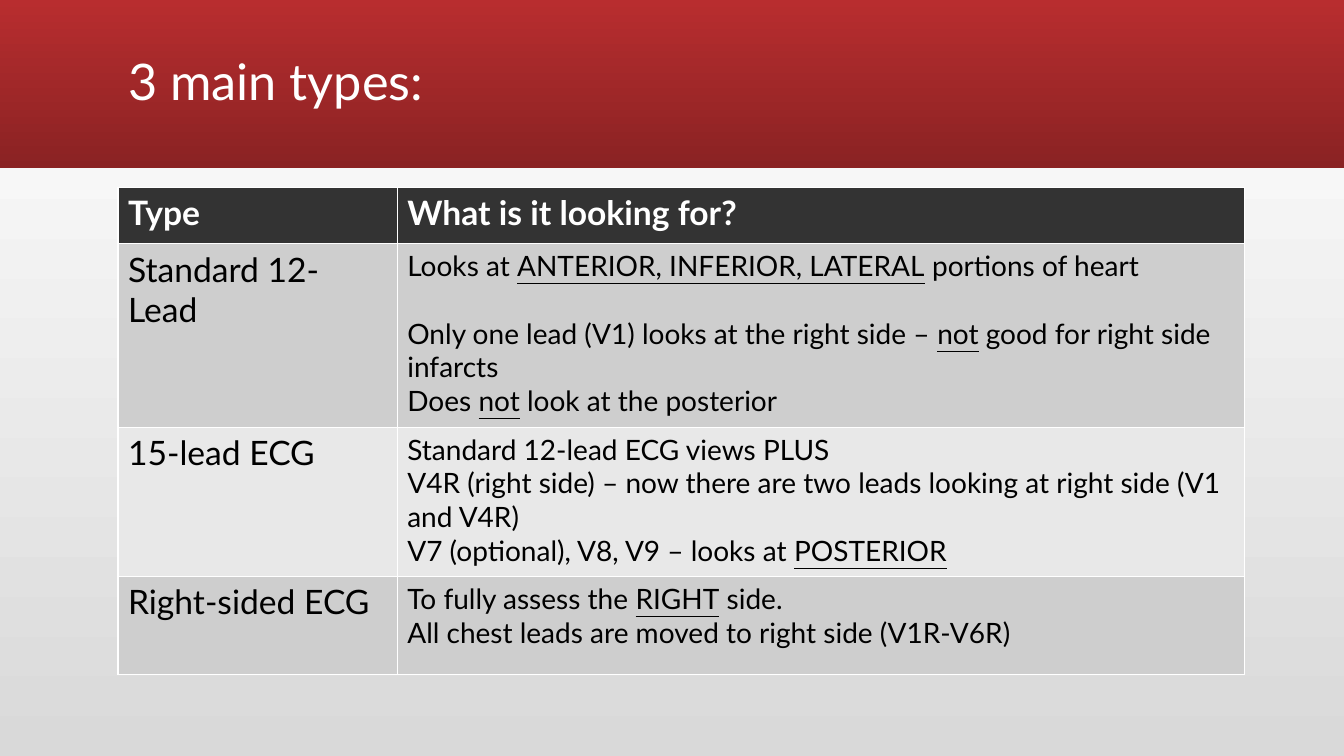
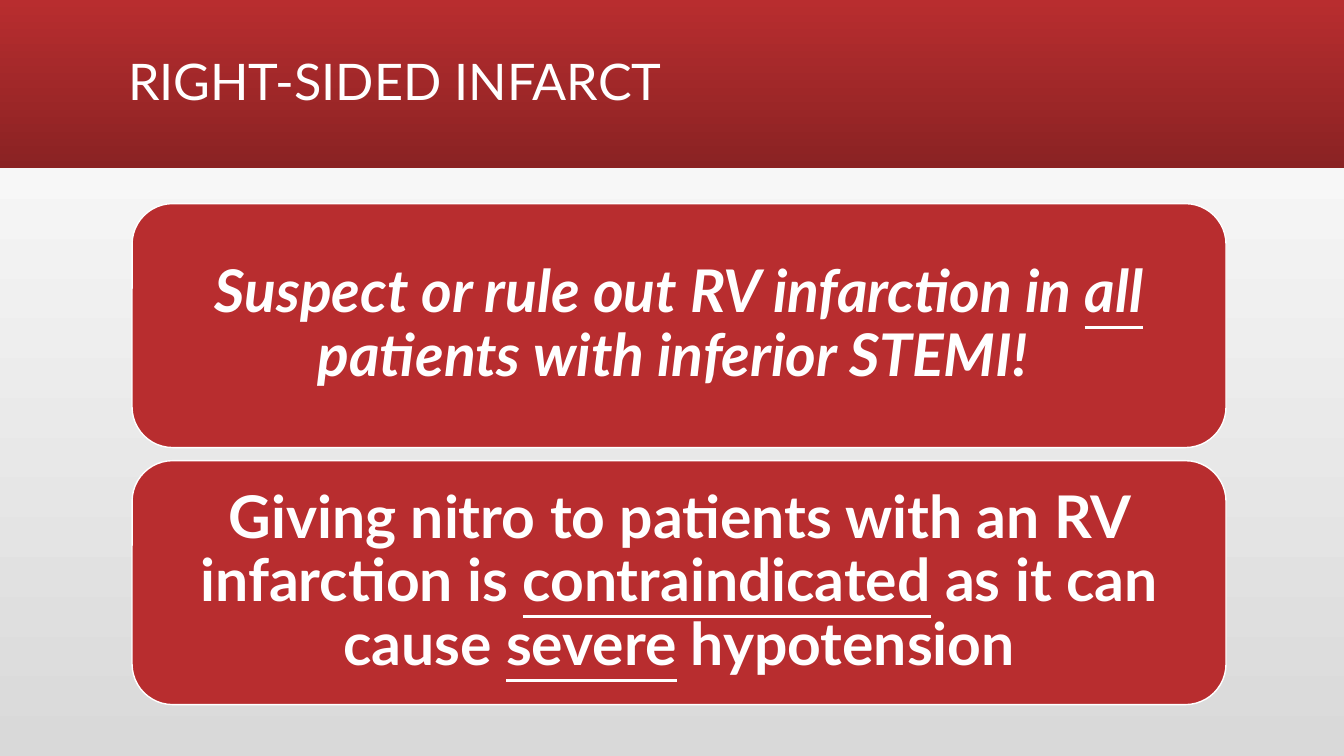
from pptx import Presentation
from pptx.dml.color import RGBColor
from pptx.enum.shapes import MSO_SHAPE
from pptx.enum.text import MSO_ANCHOR, PP_ALIGN
from pptx.util import Inches, Pt

RECTANGLE, ROUNDED = MSO_SHAPE.RECTANGLE, MSO_SHAPE.ROUNDED_RECTANGLE
LEFT, CENTER = PP_ALIGN.LEFT, PP_ALIGN.CENTER
MIDDLE = MSO_ANCHOR.MIDDLE

FONT = "Lato"
RED, DARK_RED = "B82D2F", "8A2223"
WHITE, BLACK, PALE_GREY = "FFFFFF", "000000", "D9D9D9"
HEADER_GREY, ROW_GREYS = "333333", ("CECECE", "E8E8E8")
DOWNWARD, UPWARD = 270, 90

WIDTH, HEIGHT = 13.33, 7.5
BAND_HEIGHT = 1.67
MARGIN = 1.17

# Words between underscores are underlined.
TYPES_TITLE = "3 main types:"
TYPES_HEADER = ("Type", "What is it looking for?")
TYPES = [
    ("Standard 12-Lead", [
        "Looks at _ANTERIOR, INFERIOR, LATERAL_ portions of heart",
        "Only one lead (V1) looks at the right side – _not_ good for right side infarcts",
        "Does _not_ look at the posterior",
    ]),
    ("15-lead ECG", [
        "Standard 12-lead ECG views PLUS",
        "V4R (right side) – now there are two leads looking at right side (V1 and V4R)",
        "V7 (optional), V8, V9 – looks at _POSTERIOR_",
    ]),
    ("Right-sided ECG", [
        "To fully assess the _RIGHT_ side.",
        "All chest leads are moved to right side (V1R-V6R)",
    ]),
]
COLUMN_WIDTHS = (2.77, 8.4)
ROW_HEIGHTS = (0.56, 1.82, 1.48, 0.97)
TABLE_TOP = 1.86

INFARCT_TITLE = "RIGHT-SIDED INFARCT"
WARNINGS = [  # text, italic
    ("Suspect or rule out RV infarction in _all_ patients with inferior STEMI! ", True),
    ("Giving nitro to patients with an RV infarction is _contraindicated_"
     " as it can cause _severe_ hypotension", False),
]
BOX_LEFT, BOX_TOP, BOX_WIDTH, BOX_HEIGHT = 1.31, 2.02, 10.85, 2.42
BOX_GAP, BOX_INSET = 0.13, 0.17


def color(value):
    return RGBColor.from_string(value)


def inches(*values):
    return [Inches(value) for value in values]


def fill_gradient(fill, start, end, angle):
    fill.gradient()
    fill.gradient_angle = angle
    for stop, value in zip(fill.gradient_stops, (start, end)):
        stop.color.rgb = color(value)


def write(paragraph, text, size, ink, bold=False, italic=False):
    for index, part in enumerate(text.split("_")):
        if part:
            run = paragraph.add_run()
            run.text = part
            font = run.font
            font.name, font.size, font.color.rgb = FONT, Pt(size), color(ink)
            font.bold, font.italic, font.underline = bold, italic, index % 2 == 1


def write_cell(cell, lines, size, ink, background, bold=False):
    cell.fill.solid()
    cell.fill.fore_color.rgb = color(background)
    frame = cell.text_frame
    for index, line in enumerate(lines):
        paragraph = frame.add_paragraph() if index else frame.paragraphs[0]
        write(paragraph, line, size, ink, bold)


def add_titled_slide(presentation, layout, title):
    slide = presentation.slides.add_slide(layout)
    frame = slide.shapes.title.text_frame
    frame.vertical_anchor = MIDDLE
    paragraph = frame.paragraphs[0]
    paragraph.alignment, paragraph.line_spacing = LEFT, 0.9
    write(paragraph, title, 36, WHITE)
    return slide


def style_layout(layout, slide):
    """Give the layout its background, title place and red band."""
    fill_gradient(layout.background.fill, PALE_GREY, WHITE, UPWARD)
    title = layout.placeholders[0]
    title.left, title.top, title.width, title.height = inches(MARGIN, 0.11, 11, 1.45)
    band = slide.shapes.add_shape(RECTANGLE, *inches(0, 0, WIDTH, BAND_HEIGHT))
    band.shadow.inherit = False
    band.line.fill.background()
    fill_gradient(band.fill, RED, DARK_RED, DOWNWARD)
    # Layouts cannot add shapes, so the band is made on a slide and moved.
    layout.shapes._spTree.insert(2, band._element)


def add_types_table(slide):
    table = slide.shapes.add_table(
        len(ROW_HEIGHTS), len(COLUMN_WIDTHS),
        *inches(MARGIN, TABLE_TOP, sum(COLUMN_WIDTHS), sum(ROW_HEIGHTS))).table
    for column, width in zip(table.columns, COLUMN_WIDTHS):
        column.width = Inches(width)
    for row, height in zip(table.rows, ROW_HEIGHTS):
        row.height = Inches(height)
    for index, heading in enumerate(TYPES_HEADER):
        write_cell(table.cell(0, index), [heading], 24, WHITE, HEADER_GREY, bold=True)
    for index, (name, lines) in enumerate(TYPES):
        grey = ROW_GREYS[index % 2]
        write_cell(table.cell(index + 1, 0), [name], 24, BLACK, grey)
        write_cell(table.cell(index + 1, 1), lines, 20, BLACK, grey)
    limits = table.cell(1, 1).text_frame.paragraphs[1]
    limits.space_before = Pt(24)


def add_warning(slide, index, text, italic):
    top = BOX_TOP + index * (BOX_HEIGHT + BOX_GAP)
    box = slide.shapes.add_shape(ROUNDED, *inches(BOX_LEFT, top, BOX_WIDTH, BOX_HEIGHT))
    box.shadow.inherit = False
    box.fill.solid()
    box.fill.fore_color.rgb = color(RED)
    box.line.color.rgb, box.line.width = color(WHITE), Pt(1)
    frame = box.text_frame
    frame.word_wrap, frame.vertical_anchor = True, MIDDLE
    frame.margin_left = frame.margin_right = Inches(BOX_INSET)
    frame.margin_top = frame.margin_bottom = Inches(BOX_INSET)
    paragraph = frame.paragraphs[0]
    paragraph.alignment, paragraph.line_spacing = CENTER, 0.9
    write(paragraph, text, 42, WHITE, bold=True, italic=italic)


def main():
    presentation = Presentation()
    presentation.slide_width, presentation.slide_height = inches(WIDTH, HEIGHT)
    layout = presentation.slide_layouts.get_by_name("Title Only")

    types_slide = add_titled_slide(presentation, layout, TYPES_TITLE)
    style_layout(layout, types_slide)
    add_types_table(types_slide)

    infarct_slide = add_titled_slide(presentation, layout, INFARCT_TITLE)
    for index, (text, italic) in enumerate(WARNINGS):
        add_warning(infarct_slide, index, text, italic)

    presentation.save("out.pptx")


if __name__ == "__main__":
    main()
